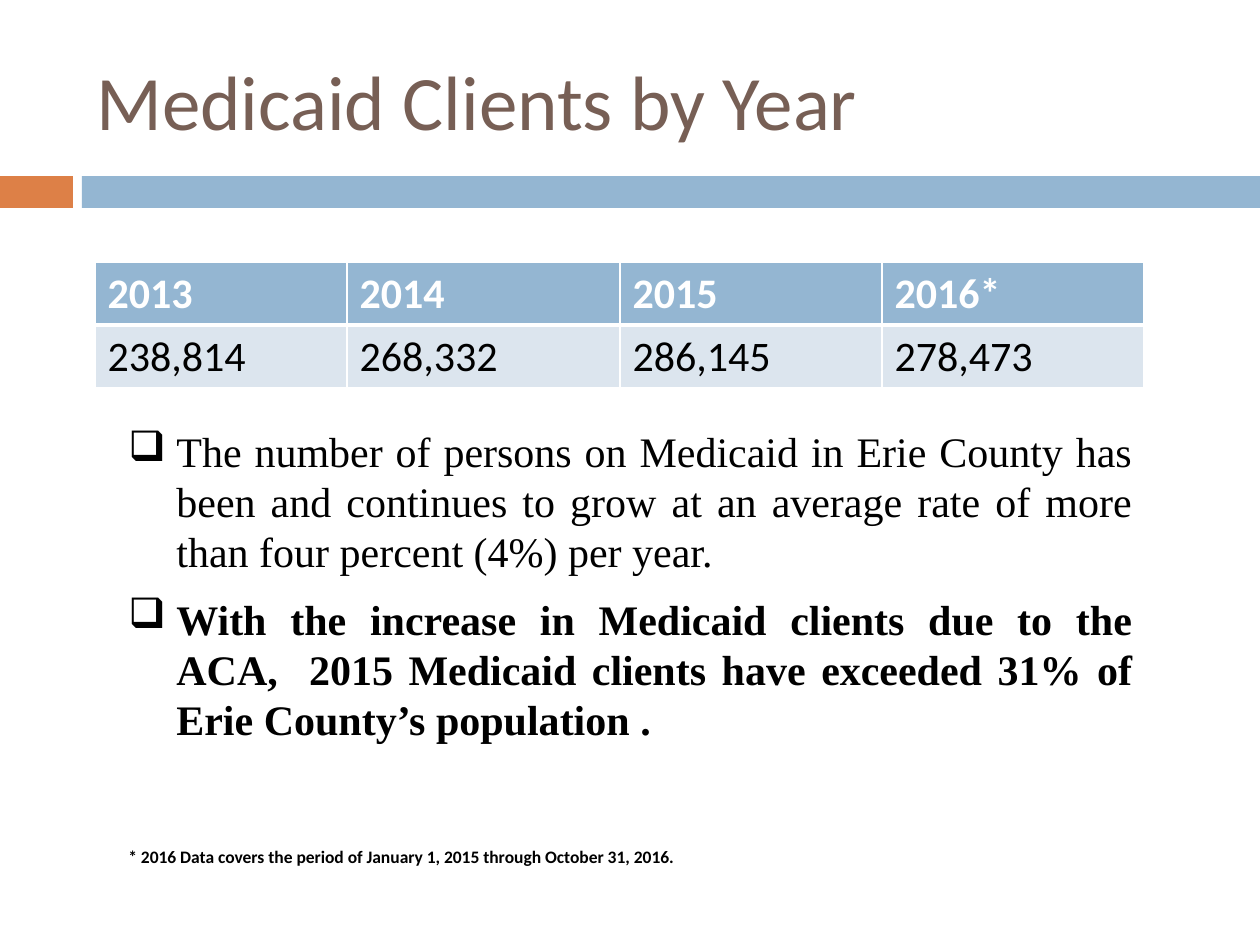
from lxml.etree import SubElement
from pptx import Presentation
from pptx.dml.color import RGBColor
from pptx.enum.shapes import MSO_SHAPE
from pptx.enum.text import MSO_ANCHOR, PP_ALIGN
from pptx.oxml.ns import qn
from pptx.util import Emu, Pt

SCALE = 914400 / 126
BLUE, ORANGE, PALE = "94B6D2", "DD8047", "DCE5EE"
BROWN, WHITE, BLACK = "775F55", "FFFFFF", "000000"


def px(length):
    return Emu(round(length * SCALE))


def color(code):
    return RGBColor.from_string(code)


class Deck:
    sans = "Calibri"
    serif = "Times New Roman"

    def __init__(self):
        self.prs = Presentation()
        self.prs.slide_width, self.prs.slide_height = px(1260), px(945)
        self.slide = self.prs.slides.add_slide(self.prs.slide_layouts[6])

    def style(self, para, size, code, bold=False, face=sans):
        font = para.font
        font.size, font.name, font.bold = Pt(size), face, bold
        font.color.rgb = color(code)

    def bar(self, x, y, w, h, code):
        bar = self.slide.shapes.add_shape(MSO_SHAPE.RECTANGLE, px(x), px(y), px(w), px(h))
        bar.shadow.inherit = False
        bar.fill.solid()
        bar.fill.fore_color.rgb = color(code)
        bar.line.fill.background()

    def frame(self, x, y, w, h):
        frame = self.slide.shapes.add_textbox(px(x), px(y), px(w), px(h)).text_frame
        frame.word_wrap = True
        return frame

    def text(self, x, y, w, h, words, size, code, bold=False, anchor=MSO_ANCHOR.TOP):
        frame = self.frame(x, y, w, h)
        frame.vertical_anchor = anchor
        para = frame.paragraphs[0]
        para.text = words
        self.style(para, size, code, bold)

    def bullets(self, x, y, w, h, items, size, indent, line, gap):
        frame = self.frame(x, y, w, h)
        for i, (words, bold) in enumerate(items):
            para = frame.add_paragraph() if i else frame.paragraphs[0]
            para.text = words
            para.alignment = PP_ALIGN.JUSTIFY
            para.line_spacing = Pt(line)
            para.space_before = Pt(gap if i else 0)
            self.style(para, size, BLACK, bold, self.serif)
            props = para._p.get_or_add_pPr()
            props.set("marL", str(px(indent)))
            props.set("indent", str(-px(indent)))
            mark = props.makeelement(qn("a:buChar"), {"char": "❑"})
            props.insert_element_before(mark, "a:tabLst", "a:defRPr", "a:extLst")

    def border(self, cell, side, width):
        props = cell._tc.get_or_add_tcPr()
        line = props.makeelement(qn(f"a:{side}"), {"w": str(Pt(width))})
        fill = SubElement(line, qn("a:solidFill"))
        SubElement(fill, qn("a:srgbClr"), val=WHITE)
        props.append(line)

    def table(self, x, y, cols, high, rows, size):
        shape = self.slide.shapes.add_table(
            len(rows), len(cols), px(x), px(y), px(sum(cols)), px(high * len(rows)))
        grid = shape.table
        for col, wide in zip(grid.columns, cols):
            col.width = px(wide)
        for r, values in enumerate(rows):
            head = r == 0
            grid.rows[r].height = px(high)
            for c, value in enumerate(values):
                cell = grid.cell(r, c)
                cell.text = value
                self.style(cell.text_frame.paragraphs[0], size, WHITE if head else BLACK, head)
                for side in ("lnL", "lnR", "lnT", "lnB"):
                    thick = side == ("lnB" if head else "lnT")
                    self.border(cell, side, 3 if thick else 1)
                cell.fill.solid()
                cell.fill.fore_color.rgb = color(BLUE if head else PALE)


def main():
    deck = Deck()
    deck.bar(0, 176, 73, 32, ORANGE)
    deck.bar(82, 176, 1178, 32, BLUE)
    deck.text(84, 32, 1124, 136, "Medicaid Clients by Year", 44, BROWN,
              anchor=MSO_ANCHOR.MIDDLE)
    deck.table(95, 262, (252, 273, 262, 262), 63, (
        ("2013", "2014", "2015", "2016*"),
        ("238,814", "268,332", "286,145", "278,473"),
    ), 24)
    deck.bullets(116, 420, 1029, 335, (
        ("The number of persons on Medicaid in Erie County has been and continues "
         "to grow at an average rate of more than four percent (4%) per year.", False),
        ("With the increase in Medicaid clients due to the ACA,  2015 Medicaid "
         "clients have exceeded 31% of Erie County’s population .", True),
    ), 24, 48, 28.6, 10)
    deck.text(116, 840, 620, 72,
              "* 2016 Data covers the period of January 1, 2015 through October 31, 2016.",
              10, BLACK, True)
    deck.prs.save("out.pptx")


if __name__ == "__main__":
    main()
